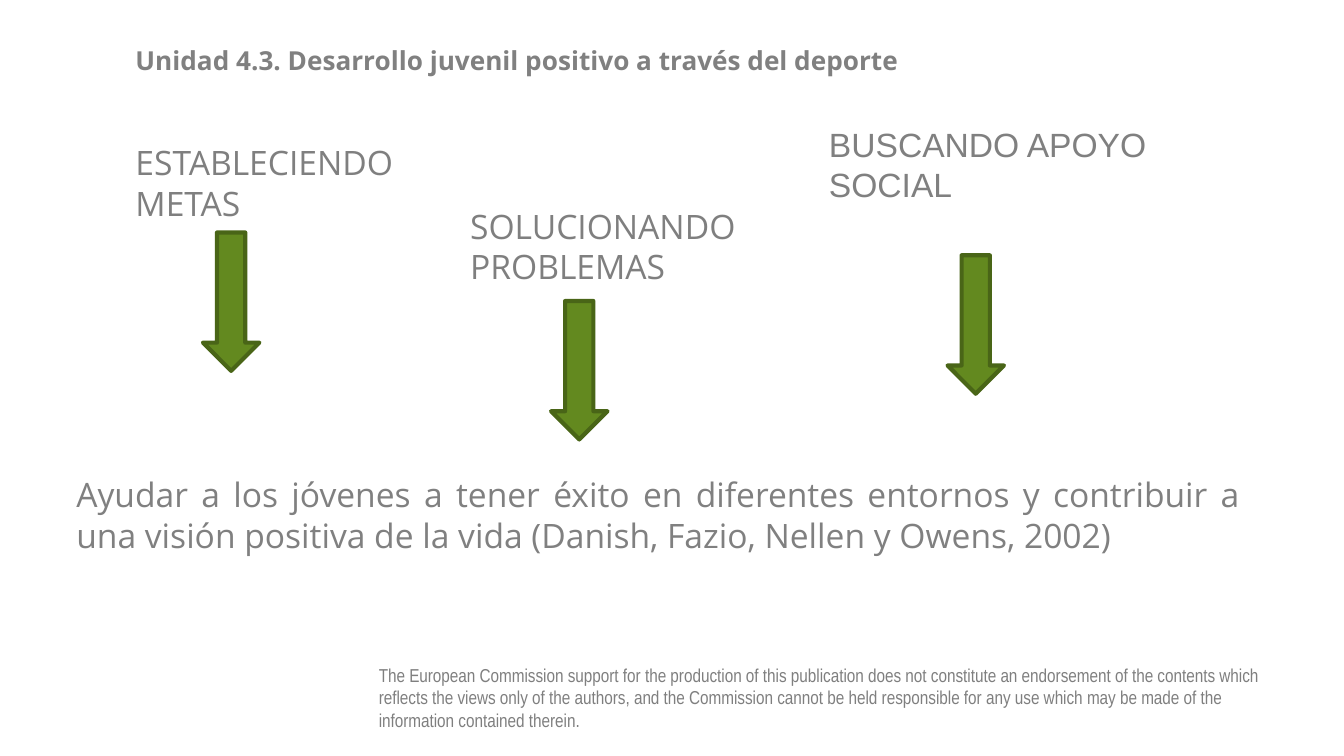
from pptx import Presentation
from pptx.dml.color import RGBColor
from pptx.enum.shapes import MSO_SHAPE
from pptx.enum.text import PP_ALIGN
from pptx.util import Inches, Pt

GRAY = RGBColor(0x80, 0x80, 0x80)
SOFT_GRAY = RGBColor(0x7F, 0x7F, 0x7F)
GREEN = RGBColor(0x63, 0x89, 0x1F)
DARK_GREEN = RGBColor(0x49, 0x65, 0x17)

SKILLS = [
    ("ESTABLECIENDO METAS", (0.91, 1.01, 2.36, 0.71), "Open Sans", SOFT_GRAY, (0.6, 0.72)),
    ("SOLUCIONANDO PROBLEMAS", (3.4, 1.48, 2.54, 0.71), "Open Sans", SOFT_GRAY, (0.7, 0.76)),
    ("BUSCANDO APOYO SOCIAL", (6.07, 0.87, 3.54, 0.71), "Arial", GRAY, (0.98, 1.03)),
]


def add_text(slide, box, text, size, font="Open Sans", color=GRAY, bold=False, align=PP_ALIGN.LEFT):
    tf = slide.shapes.add_textbox(*map(Inches, box)).text_frame
    tf.word_wrap = True
    p = tf.paragraphs[0]
    p.alignment = align
    r = p.add_run()
    r.text = text
    r.font.name = font
    r.font.size = Pt(size)
    r.font.bold = bold
    r.font.color.rgb = color


def add_skill(slide, box, text, font, color, arrow_offset):
    add_text(slide, box, text, 18, font, color)
    left, top = box[0] + arrow_offset[0], box[1] + arrow_offset[1]
    arrow = slide.shapes.add_shape(
        MSO_SHAPE.DOWN_ARROW, Inches(left), Inches(top), Inches(0.42), Inches(1.03))
    arrow.shadow.inherit = False
    arrow.fill.solid()
    arrow.fill.fore_color.rgb = GREEN
    arrow.line.color.rgb = DARK_GREEN
    arrow.line.width = Pt(2.25)


def main():
    prs = Presentation()
    prs.slide_width = Inches(10)
    prs.slide_height = prs.slide_width * 9 // 16
    slide = prs.slides.add_slide(prs.slide_layouts[6])

    add_text(slide, (0.91, 0.28, 7, 0.35),
             "Unidad 4.3. Desarrollo juvenil positivo a través del deporte", 14, bold=True)
    for text, box, font, color, arrow_offset in SKILLS:
        add_skill(slide, box, text, font, color, arrow_offset)
    add_text(slide, (0.47, 3.48, 8.86, 0.71),
             "Ayudar a los jóvenes a tener éxito en diferentes entornos y contribuir a una "
             "visión positiva de la vida (Danish, Fazio, Nellen y Owens, 2002)",
             18, align=PP_ALIGN.JUSTIFY)
    add_text(slide, (2.72, 4.89, 6.93, 0.67),
             "The European Commission support for the production of this publication does not "
             "constitute an endorsement of the contents which reflects the views only of the "
             "authors, and the Commission cannot be held responsible for any use which may be "
             "made of the information contained therein.",
             10, "Arial Narrow", SOFT_GRAY)
    prs.save("out.pptx")


if __name__ == "__main__":
    main()
